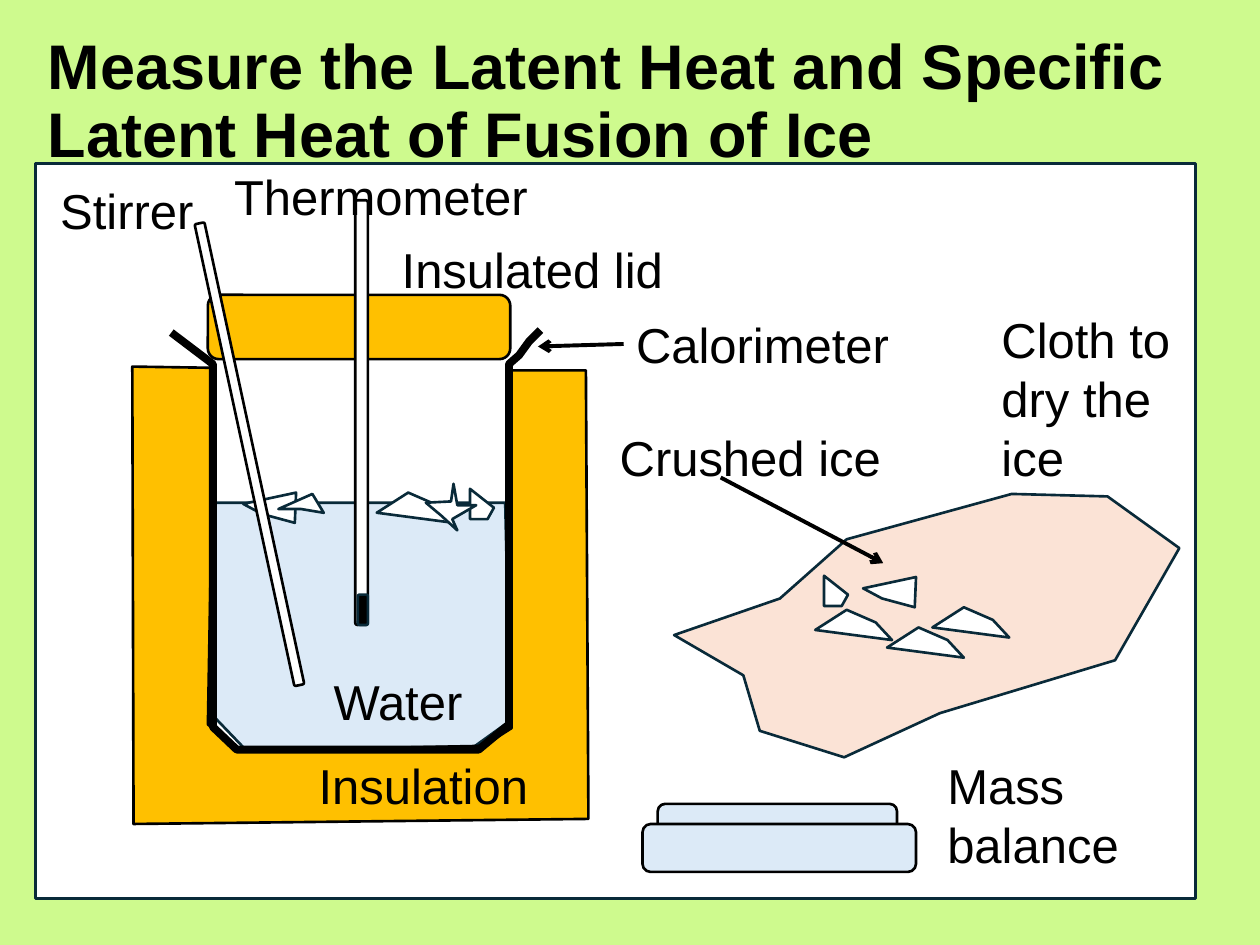
from lxml import etree
from pptx import Presentation
from pptx.dml.color import RGBColor
from pptx.enum.shapes import MSO_CONNECTOR, MSO_SHAPE
from pptx.enum.text import MSO_ANCHOR, MSO_AUTO_SIZE
from pptx.oxml.ns import qn
from pptx.util import Inches, Pt

RECT = MSO_SHAPE.RECTANGLE
ROUND = MSO_SHAPE.ROUNDED_RECTANGLE
STRAIGHT = MSO_CONNECTOR.STRAIGHT
MIDDLE = MSO_ANCHOR.MIDDLE
GROW = MSO_AUTO_SIZE.SHAPE_TO_FIT_TEXT

LIME, WHITE, BLACK, NAVY = "CEFA8E", "FFFFFF", "000000", "092A39"
AMBER, WATER, CLOTH = "FFC000", "DCEAF7", "FBE3D6"

WATER_PTS = [(1.71, 3.99), (1.71, 5.7), (1.94, 5.94), (3.73, 5.95),
             (4.05, 5.72), (4.01, 3.99)]
INSULATION_PTS = [(1.7, 2.92), (1.05, 2.91), (1.06, 6.54), (4.67, 6.5),
                  (4.65, 2.94), (4.04, 2.94), (4.06, 5.78), (3.84, 5.92),
                  (1.89, 5.96), (1.65, 5.75)]
CALORIMETER_PTS = [(1.36, 2.64), (1.69, 2.89), (1.69, 5.77), (1.88, 5.95),
                   (3.8, 5.95), (4.04, 5.75), (4.04, 2.89), (4.12, 2.82),
                   (4.2, 2.71), (4.29, 2.62)]
CLOTH_PTS = [(5.35, 5.04), (6.19, 4.75), (6.72, 4.28), (8.03, 3.92),
             (8.79, 3.94), (9.36, 4.35), (8.85, 5.24), (7.46, 5.66),
             (6.7, 6.01), (6.03, 5.8), (5.9, 5.36)]

CHUNK = [(0.25, 0), (0, 0.16), (0.61, 0.24), (0.48, 0.1)]
WEDGE = [(0, 0.24), (0, 0), (0.19, 0.15), (0.14, 0.24)]
SHARD = [(0, 0.09), (0.42, 0), (0.41, 0.24), (0.15, 0.17)]
SLIVER = [(0.27, 0), (0.36, 0.15), (0.18, 0.12), (0, 0.12)]
STAR = [(0.2, 0.14), (0.22, 0), (0.25, 0.17), (0.4, 0.17), (0.21, 0.28),
        (0.25, 0.37), (0.12, 0.25), (0, 0.15)]
FLOATING_ICE = [(CHUNK, 2.99, 3.91), (WEDGE, 3.73, 3.88), (SHARD, 1.93, 3.91),
                (SLIVER, 2.21, 3.92), (STAR, 3.38, 3.84)]
CLOTH_ICE = [(CHUNK, 6.47, 4.84), (SHARD, 6.85, 4.58), (CHUNK, 7.4, 4.82),
             (CHUNK, 7.04, 4.98), (WEDGE, 6.54, 4.57)]

SOLIDS = [
    (1.65, 2.34, 2.4, 0.51, AMBER, BLACK, 0),
    (2.82, 1.59, 0.1, 3.37, WHITE, BLACK, 0),
    (2.84, 4.72, 0.08, 0.24, BLACK, NAVY, 0),
    (1.94, 1.73, 0.08, 3.75, WHITE, BLACK, 347.8),
    (5.22, 6.38, 1.9, 0.36, WATER, BLACK, 0),
    (5.1, 6.54, 2.17, 0.38, WATER, BLACK, 0),
]
LABELS = [
    ("Calorimeter", 4.95, 2.45, 2.24, 0.57, False),
    ("Insulated lid", 3.09, 1.85, 2.57, 0.57, True),
    ("Stirrer", 0.38, 1.38, 1.27, 0.57, False),
    ("Thermometer", 1.76, 1.27, 2.57, 0.57, False),
    ("Insulation", 2.43, 5.95, 2.57, 0.57, True),
    ("Cloth to dry the ice", 7.85, 2.41, 1.6, 1.51, True),
    ("Water", 2.55, 5.28, 1.24, 0.57, False),
    ("Mass balance", 7.42, 5.95, 1.73, 1.04, True),
    ("Crushed ice", 4.82, 3.34, 2.3, 0.57, False),
]
ARROWS = [(5.72, 3.79, 7.01, 4.47), (4.95, 2.73, 4.27, 2.75)]


def rgb(value):
    """Turn a hex string into a colour."""
    return RGBColor.from_string(value)


def paint(s, fill, line, weight=1.5):
    """Set fill and outline of a shape and remove its shadow."""
    s.shadow.inherit = False
    if fill:
        s.fill.solid()
        s.fill.fore_color.rgb = rgb(fill)
    else:
        s.fill.background()
    s.line.color.rgb = rgb(line)
    s.line.width = Pt(weight)


def add_solid(slide, kind, x, y, w, h, fill, line, rotation=0):
    """Add a preset shape."""
    s = slide.shapes.add_shape(kind, *map(Inches, (x, y, w, h)))
    s.rotation = rotation
    paint(s, fill, line)


def add_outline(slide, points, fill, line, weight=1.5, close=True, x=0, y=0):
    """Add a polygon or open path, shifted by x and y."""
    pts = [(Inches(x + px), Inches(y + py)) for px, py in points]
    builder = slide.shapes.build_freeform(*pts[0])
    builder.add_line_segments(pts[1:], close=close)
    paint(builder.convert_to_shape(), fill, line, weight)


def add_ice(slide, pieces):
    """Add a group of ice pieces."""
    for points, x, y in pieces:
        add_outline(slide, points, WHITE, NAVY, x=x, y=y)


def add_text(slide, text, x, y, w, h, wrap=True, size=28, bold=False):
    """Add a text box and return its text frame."""
    tf = slide.shapes.add_textbox(*map(Inches, (x, y, w, h))).text_frame
    tf.word_wrap = wrap
    tf.auto_size = GROW
    r = tf.paragraphs[0].add_run()
    r.text = text
    for name, value in {"name": "Arial", "size": Pt(size), "bold": bold}.items():
        setattr(r.font, name, value)
    r.font.color.rgb = rgb(BLACK)
    return tf


def add_title(slide, text):
    """Add the bold heading."""
    tf = add_text(slide, text, 0.28, 0.22, 9.53, 1.19, size=36, bold=True)
    tf.vertical_anchor = MIDDLE
    tf.paragraphs[0].line_spacing = 0.9


def add_arrow(slide, x1, y1, x2, y2):
    """Add a pointer with an open head at its end."""
    s = slide.shapes.add_connector(STRAIGHT, *map(Inches, (x1, y1, x2, y2)))
    s.line.color.rgb = rgb(BLACK)
    s.line.width = Pt(2.25)
    etree.SubElement(s.line._get_or_add_ln(), qn("a:tailEnd"), type="arrow")
    etree.SubElement(s._element.spPr, qn("a:effectLst"))


def main():
    """Build the slide and save it."""
    prs = Presentation()
    prs.slide_width, prs.slide_height = Inches(10), Inches(7.5)
    slide = prs.slides.add_slide(prs.slide_layouts[6])
    slide.background.fill.solid()
    slide.background.fill.fore_color.rgb = rgb(LIME)

    add_solid(slide, RECT, 0.28, 1.3, 9.21, 5.83, WHITE, NAVY)
    add_outline(slide, WATER_PTS, WATER, NAVY)
    add_outline(slide, INSULATION_PTS, AMBER, BLACK)
    add_outline(slide, CALORIMETER_PTS, None, BLACK, 4.5, close=False)
    add_ice(slide, FLOATING_ICE)
    add_outline(slide, CLOTH_PTS, CLOTH, NAVY)
    add_ice(slide, CLOTH_ICE)
    for solid in SOLIDS:
        add_solid(slide, ROUND, *solid)
    for label in LABELS:
        add_text(slide, *label)
    add_title(slide, "Measure the Latent Heat and Specific Latent Heat of Fusion of Ice")
    for arrow in ARROWS:
        add_arrow(slide, *arrow)
    prs.save("out.pptx")


if __name__ == "__main__":
    main()
